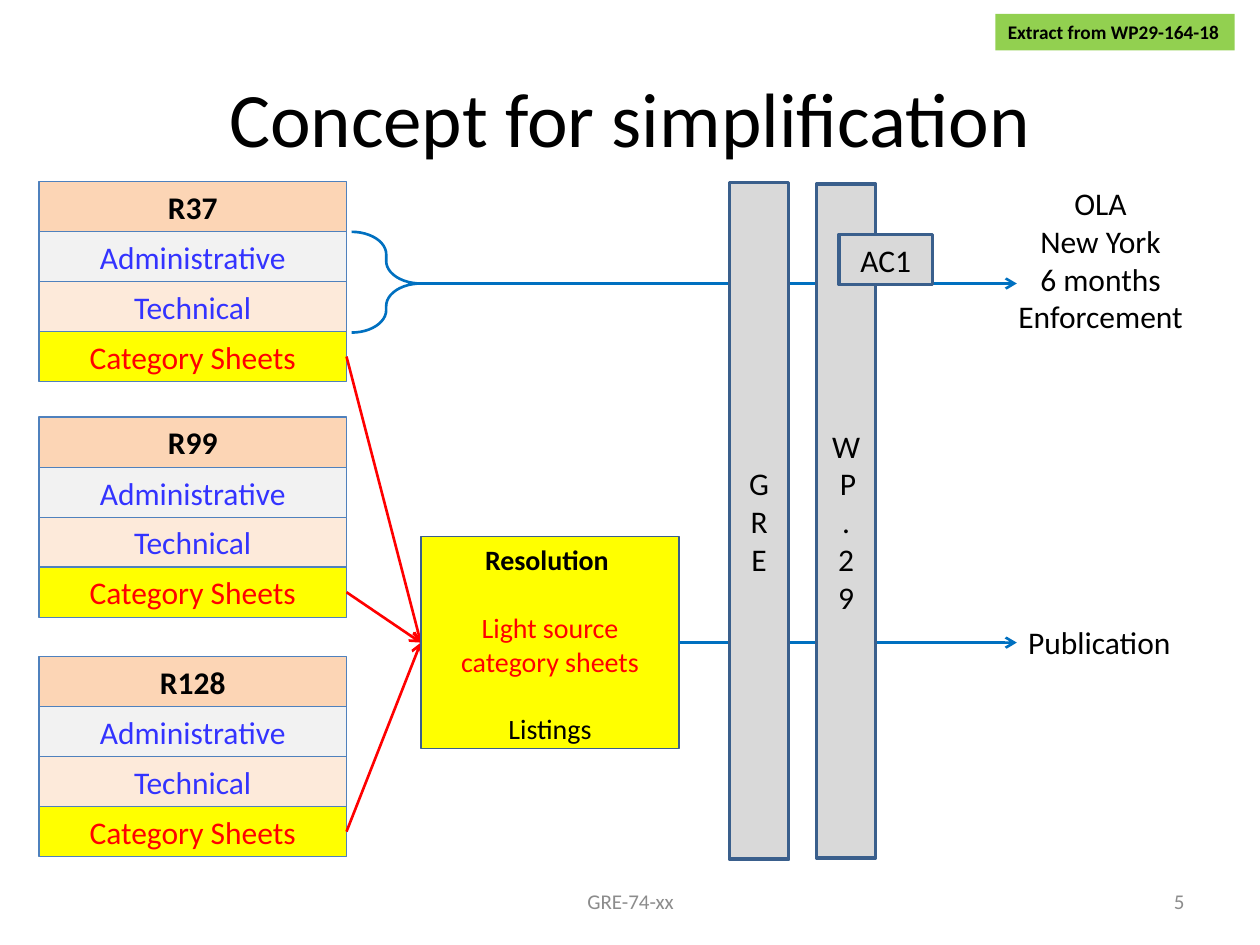
from pptx import Presentation
from pptx.dml.color import RGBColor
from pptx.enum.shapes import MSO_CONNECTOR, MSO_SHAPE
from pptx.enum.text import MSO_ANCHOR, PP_ALIGN
from pptx.oxml.ns import qn
from pptx.util import Inches, Pt
from lxml.etree import SubElement

BLACK = RGBColor(0x00, 0x00, 0x00)
RED = RGBColor(0xFF, 0x00, 0x00)
BLUE = RGBColor(0x00, 0x70, 0xC0)
TEXT_BLUE = RGBColor(0x33, 0x33, 0xFF)
EDGE = RGBColor(0x4F, 0x81, 0xBD)
DARK_EDGE = RGBColor(0x3A, 0x5F, 0x8C)
PEACH = RGBColor(0xFC, 0xD5, 0xB5)
PALE_PEACH = RGBColor(0xFD, 0xEA, 0xDA)
PALE_GRAY = RGBColor(0xF2, 0xF2, 0xF2)
GRAY = RGBColor(0xD9, 0xD9, 0xD9)
FOOTER_GRAY = RGBColor(0x8C, 0x8C, 0x8C)
YELLOW = RGBColor(0xFF, 0xFF, 0x00)
GREEN = RGBColor(0x92, 0xD0, 0x50)

ROW_H = 0.4
ROW_STEP = 0.395
ROWS = [
    ("Administrative", PALE_GRAY, TEXT_BLUE),
    ("Technical", PALE_PEACH, TEXT_BLUE),
    ("Category Sheets", YELLOW, RED),
]


def add_text(tf, text, size=18, color=BLACK, bold=False, align=PP_ALIGN.CENTER,
             before=0, new=False):
    p = tf.add_paragraph() if new else tf.paragraphs[0]
    p.alignment = align
    p.space_before = Pt(before)
    r = p.add_run()
    r.text = text
    r.font.name = "Calibri"
    r.font.size = Pt(size)
    r.font.bold = bold
    r.font.color.rgb = color


def set_frame(tf, anchor=MSO_ANCHOR.MIDDLE, inset=None):
    tf.word_wrap = True
    tf.vertical_anchor = anchor
    if inset is not None:
        tf.margin_left = tf.margin_right = Inches(inset)
        tf.margin_top = tf.margin_bottom = Inches(inset)


def add_box(s, box, fill=None, line=None, width=0.75, shape=MSO_SHAPE.RECTANGLE):
    sp = s.shapes.add_shape(shape, *map(Inches, box))
    sp.shadow.inherit = False
    if fill is None:
        sp.fill.background()
    else:
        sp.fill.solid()
        sp.fill.fore_color.rgb = fill
    if line is None:
        sp.line.fill.background()
    else:
        sp.line.color.rgb = line
        sp.line.width = Pt(width)
    return sp


def add_label(s, box, lines, inset=None, **fmt):
    tf = s.shapes.add_textbox(*map(Inches, box)).text_frame
    set_frame(tf, inset=inset)
    for i, line in enumerate(lines):
        add_text(tf, line, new=i > 0, **fmt)


def add_arrow(s, start, end, color):
    cxn = s.shapes.add_connector(MSO_CONNECTOR.STRAIGHT, *map(Inches, start + end))
    cxn.line.color.rgb = color
    cxn.line.width = Pt(1.5)
    sp_pr = cxn._element.spPr
    SubElement(sp_pr.find(qn("a:ln")), qn("a:tailEnd"), type="arrow")
    SubElement(sp_pr, qn("a:effectLst"))


def add_regulation(s, name, left, top, width):
    """Stack the heading of a regulation on its three parts."""
    head = add_box(s, (left, top, width, ROW_H), PEACH, EDGE)
    set_frame(head.text_frame)
    add_text(head.text_frame, name, bold=True)
    for i, (text, fill, color) in enumerate(ROWS):
        y = top + ROW_H + i * ROW_STEP
        sp = add_box(s, (left, y, width, ROW_H), fill, EDGE)
        set_frame(sp.text_frame)
        add_text(sp.text_frame, text, color=color)


def add_resolution(s, box):
    tf = add_box(s, box, YELLOW, DARK_EDGE).text_frame
    set_frame(tf, MSO_ANCHOR.TOP)
    add_text(tf, "Resolution ", 16, bold=True)
    add_text(tf, "Light source category sheets", 16, RED, before=19.5, new=True)
    add_text(tf, "Listings", 16, before=19.5, new=True)


def add_body(s, box, name, vertical=False):
    """Add a gray box for a deciding body, with stacked letters if vertical."""
    tf = add_box(s, box, GRAY, DARK_EDGE, 2).text_frame
    set_frame(tf, inset=0.04)
    if vertical:
        tf._txBody.bodyPr.set("vert", "wordArtVert")
    add_text(tf, name)


def add_tag(s, box):
    tf = add_box(s, box, GREEN).text_frame
    set_frame(tf, MSO_ANCHOR.TOP)
    tf.word_wrap = False
    add_text(tf, "Extract from WP29-164-18", 11, bold=True, align=PP_ALIGN.LEFT)


def add_title(s, box):
    title = s.shapes.title
    title.left, title.top, title.width, title.height = map(Inches, box)
    add_text(title.text_frame, "Concept for simplification", 44)


def add_footer(s, top, height):
    add_label(s, (3.42, top, 3.17, height), ["GRE-74-xx"], size=12, color=FOOTER_GRAY)
    add_label(s, (7.17, top, 2.33, height), ["5"], size=12, color=FOOTER_GRAY,
              align=PP_ALIGN.RIGHT)


def add_flow(s):
    left, width = 0.31, 2.44
    hub = (3.34, 5.1)
    regulations = {"R37": 1.44, "R99": 3.31, "R128": 5.21}
    for name, top in regulations.items():
        add_regulation(s, name, left, top, width)
        sheets_y = top + ROW_H + 2 * ROW_STEP + ROW_H / 2
        add_arrow(s, (left + width, sheets_y), hub, RED)
    add_resolution(s, (hub[0], 4.26, 2.05, 1.68))

    brace = add_box(s, (2.79, 1.84, 0.55, 0.8), line=BLUE, width=1.5,
                    shape=MSO_SHAPE.RIGHT_BRACE)
    brace.adjustments[0] = 0.325
    brace.adjustments[1] = 0.513
    add_arrow(s, (3.34, 2.25), (8.07, 2.25), BLUE)
    add_arrow(s, (5.39, 5.1), (8.07, 5.1), BLUE)

    add_body(s, (5.79, 1.45, 0.47, 5.37), "GRE", vertical=True)
    add_body(s, (6.48, 1.46, 0.47, 5.35), "WP.29", vertical=True)
    add_body(s, (6.66, 1.86, 0.74, 0.4), "AC1")
    add_label(s, (8.07, 4.78, 1.31, 0.63), ["Publication"], inset=0.04)
    add_label(s, (7.97, 1.52, 1.53, 1.08),
              ["OLA", "New York", "6 months", "Enforcement"], inset=0.04)


def main():
    prs = Presentation()
    prs.slide_width, prs.slide_height = Inches(10), Inches(7.5)
    s = prs.slides.add_slide(prs.slide_layouts[5])
    add_title(s, (0.5, 0.3, 9, 1.25))
    add_flow(s)
    add_footer(s, 6.95, 0.4)
    add_tag(s, (7.9, 0.11, 1.9, 0.29))
    prs.save("out.pptx")


if __name__ == "__main__":
    main()
